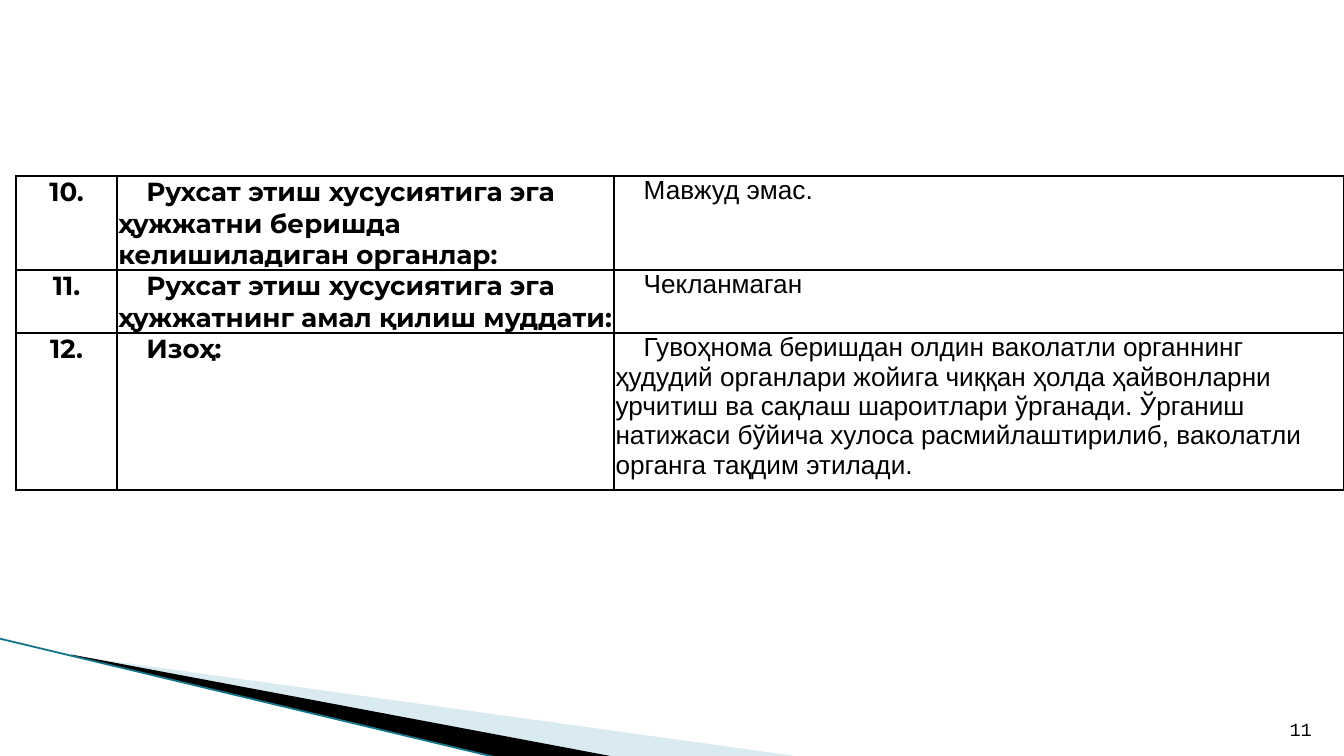
from lxml import etree
from pptx import Presentation
from pptx import util as u
from pptx.dml.color import RGBColor
from pptx.enum import shapes, text
from pptx.oxml import ns

BLACK = RGBColor(0, 0, 0)
WHITE = RGBColor(255, 255, 255)
PALE = RGBColor(0xA0, 0xCB, 0xDC)
TEAL = RGBColor(0x16, 0x74, 0x8A)

COLS = [0.75, 3.7, 5.43]
TALL = [0.05, 0.03, 0.45]
ROWS = [
    ("10.", "Рухсат этиш хусусиятига эга ҳужжатни беришда келишиладиган органлар:",
     "Мавжуд эмас."),
    ("11.", "Рухсат этиш хусусиятига эга ҳужжатнинг амал қилиш муддати:",
     "Чекланмаган"),
    ("12.", "Изоҳ:",
     "Гувоҳнома беришдан олдин ваколатли органнинг ҳудудий органлари жойига "
     "чиққан ҳолда ҳайвонларни урчитиш ва сақлаш шароитлари ўрганади. Ўрганиш "
     "натижаси бўйича хулоса расмийлаштирилиб, ваколатли органга тақдим этилади."),
]


def set_frame(wedge, box):
    """Give an outline a new frame while its points stay in place."""
    left, top, width, height = [u.Inches(v) for v in box]
    outline = wedge._element.spPr.find(".//" + ns.qn("a:path"))
    outline.set("w", str(width))
    outline.set("h", str(height))
    for point in outline.iter(ns.qn("a:pt")):
        point.set("x", str(int(point.get("x")) + wedge.left - left))
        point.set("y", str(int(point.get("y")) + wedge.top - top))
    wedge.left, wedge.top, wedge.width, wedge.height = left, top, width, height


def add_wedge(slide, box, points, color, alpha=100):
    """Draw a filled outline through points given in inches."""
    first, *rest = [(u.Inches(x), u.Inches(y)) for x, y in points]
    pen = slide.shapes.build_freeform(*first)
    pen.add_line_segments(rest)
    wedge = pen.convert_to_shape()
    set_frame(wedge, box)
    wedge.shadow.inherit = False
    wedge.fill.solid()
    wedge.fill.fore_color.rgb = color
    wedge.line.fill.background()
    tint = wedge._element.spPr.find(".//" + ns.qn("a:srgbClr"))
    etree.SubElement(tint, ns.qn("a:alpha"), val=str(alpha * 1000))


def add_edge(slide, start, end):
    """Draw the thin line along the wedges."""
    ends = [u.Inches(v) for v in start + end]
    edge = slide.shapes.add_connector(shapes.MSO_CONNECTOR.STRAIGHT, *ends)
    edge.line.color.rgb = TEAL
    edge.line.width = u.Pt(0.95)
    etree.SubElement(edge._element.spPr, ns.qn("a:effectLst"))


def set_font(para, name, size, bold=False):
    """Give a paragraph its black font."""
    font = para.font
    font.name, font.size, font.bold = name, u.Pt(size), bold
    font.color.rgb = BLACK


def add_border(cell):
    """Put a black line on all four sides of a cell."""
    props = cell._tc.get_or_add_tcPr()
    for side in "LRTB":
        line = etree.SubElement(props, ns.qn("a:ln" + side), w=str(u.Pt(1)))
        fill = etree.SubElement(line, ns.qn("a:solidFill"))
        etree.SubElement(fill, ns.qn("a:srgbClr"), val=str(BLACK))


def fill_cell(cell, words, col):
    """Write and format one cell according to its column."""
    cell.margin_left = cell.margin_right = u.Inches(0.01)
    cell.margin_top = cell.margin_bottom = 0
    add_border(cell)
    cell.fill.solid()
    cell.fill.fore_color.rgb = WHITE
    cell.text = words
    para = cell.text_frame.paragraphs[0]
    if col == 0:
        para.alignment = text.PP_ALIGN.CENTER
    else:
        props = para._p.get_or_add_pPr()
        props.set("marL", "0")
        props.set("indent", str(u.Inches(0.21)))
    set_font(para, "Arial" if col == 2 else "Montserrat", 14, col < 2)


def add_grid(slide):
    """Build the table of numbered entries, whose rows grow with their text."""
    frame = slide.shapes.add_table(
        len(ROWS), len(COLS), u.Inches(0.12), u.Inches(1.31),
        u.Inches(sum(COLS)), u.Inches(sum(TALL)))
    grid = frame.table
    grid.first_row = grid.horz_banding = False
    for col, width in zip(grid.columns, COLS):
        col.width = u.Inches(width)
    for row, height, entry in zip(grid.rows, TALL, ROWS):
        row.height = u.Inches(height)
        for col, words in enumerate(entry):
            fill_cell(row.cells[col], words, col)


def add_number(slide, words):
    """Write the page number in the lower right corner."""
    box = slide.shapes.add_textbox(
        u.Inches(9.46), u.Inches(5.26), u.Inches(0.4), u.Inches(0.3))
    frame = box.text_frame
    frame.word_wrap = True
    frame.vertical_anchor = text.MSO_ANCHOR.BOTTOM
    frame.text = words
    para = frame.paragraphs[0]
    para.alignment = text.PP_ALIGN.RIGHT
    set_font(para, "Courier New", 10)


def main():
    """Build the slide and save it."""
    deck = Presentation()
    deck.slide_width, deck.slide_height = u.Inches(10), u.Inches(5.625)
    slide = deck.slides.add_slide(deck.slide_layouts[6])
    add_wedge(slide, (0.78, 4.1, 4.16, 1.18),
              [(0.55, 4.88), (5.95, 5.63), (4.56, 5.63)], PALE, 40)
    add_wedge(slide, (-0.06, 4.74, 4.16, 0.69),
              [(0.53, 4.87), (4.57, 5.63), (3.72, 5.64), (0.54, 4.88)], BLACK)
    add_edge(slide, (-0.01, 4.75), (3.71, 5.64))
    add_number(slide, "11")
    add_grid(slide)
    deck.save("out.pptx")


if __name__ == "__main__":
    main()
